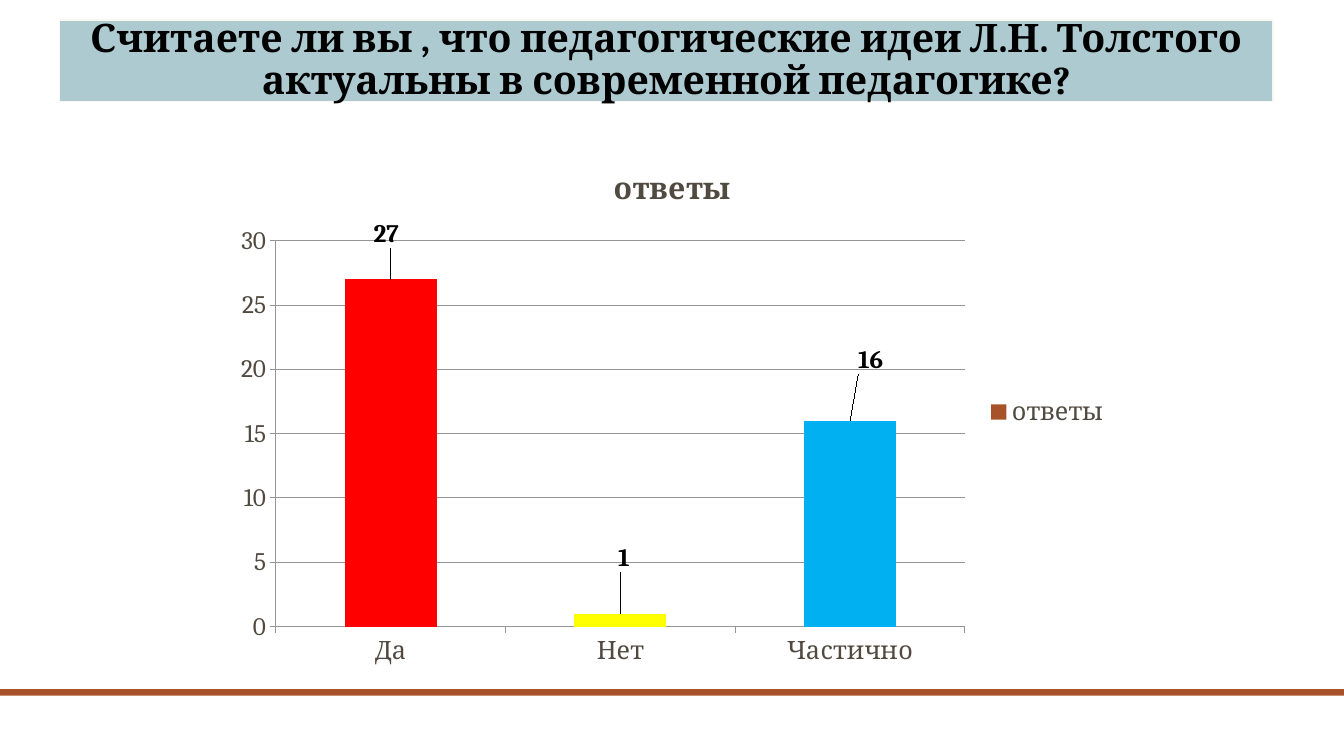
"""Build a survey slide with a banner title and a column chart of the answers."""
from dataclasses import dataclass

import lxml.etree
import pptx
import pptx.chart.data
import pptx.dml.color
import pptx.enum.chart
import pptx.enum.shapes
import pptx.enum.text
import pptx.oxml
import pptx.oxml.ns
import pptx.util

Pt = pptx.util.Pt


@dataclass(frozen=True)
class Theme:
    """Colours, font and type sizes of the slide."""
    font: str = "Cambria"
    black: str = "000000"
    text: str = "514A40"
    accent: str = "A85229"
    banner: str = "ADCAD1"
    banner_line: str = "F9F7F3"
    grid: str = "959595"
    title_size: float = 28
    chart_title_size: float = 21.6
    chart_size: float = 18


THEME = Theme()
QUESTION = "Считаете ли вы , что педагогические идеи Л.Н. Толстого актуальны в современной педагогике?"
SERIES_NAME = "ответы"
ANSWERS = [
    ("Да", 27, "FF0000", (-0.005, -0.05)),
    ("Нет", 1, "FFFF00", (0.004, -0.07)),
    ("Частично", 16, "00B0F0", (0.023, -0.08)),
]
PLOT_AREA = {"x": 0.058, "y": 0.177, "w": 0.769, "h": 0.728}


def color(value):
    """Turn a hex string into a colour."""
    return pptx.dml.color.RGBColor.from_string(value)


def format_font(font, size, fill, bold=False):
    """Apply the slide font with a size, colour and weight."""
    font.name = THEME.font
    font.size = Pt(size)
    font.bold = bold
    font.color.rgb = color(fill)


def write_text(text_frame, text, *, size, fill, bold=False, align=None, spacing=None):
    """Write one formatted paragraph into a text frame."""
    paragraph = text_frame.paragraphs[0]
    paragraph.alignment = align
    paragraph.line_spacing = spacing
    run = paragraph.add_run()
    run.text = text
    format_font(run.font, size, fill, bold)


def paint(fill, value):
    """Give a fill one solid colour."""
    fill.solid()
    fill.fore_color.rgb = color(value)


def add_banner_title(slide):
    """Format the title placeholder as a coloured banner."""
    title = slide.shapes.title
    title.left, title.top, title.width, title.height = Pt(42.5), Pt(14.4), Pt(866.9), Pt(58.3)
    paint(title.fill, THEME.banner)
    title.line.color.rgb = color(THEME.banner_line)
    title.line.width = Pt(1)
    text_frame = title.text_frame
    text_frame.auto_size = pptx.enum.text.MSO_AUTO_SIZE.NONE
    text_frame.word_wrap = True
    text_frame.vertical_anchor = pptx.enum.text.MSO_ANCHOR.MIDDLE
    write_text(text_frame, QUESTION, size=THEME.title_size, fill=THEME.black, bold=True,
               align=pptx.enum.text.PP_ALIGN.CENTER, spacing=0.9)


def add_footer_rule(slide, width):
    """Draw the full-width rule near the bottom."""
    rule = slide.shapes.add_shape(
        pptx.enum.shapes.MSO_SHAPE.RECTANGLE, 0, Pt(492.3), width, Pt(4.6))
    rule.shadow.inherit = False
    paint(rule.fill, THEME.accent)
    rule.line.fill.background()


def manual_layout(**values):
    """Build a chart layout element from its fractions."""
    layout = pptx.oxml.parse_xml(f"<c:layout {pptx.oxml.ns.nsdecls('c')}><c:manualLayout/></c:layout>")
    for name, value in values.items():
        child = lxml.etree.SubElement(layout[0], pptx.oxml.ns.qn(f"c:{name}"))
        child.set("val", str(value))
    return layout


def place_plot_area(chart):
    """Fix the inner plot area inside the chart frame."""
    plot_area = chart.plots[0]._element.getparent()
    for layout in plot_area.findall(pptx.oxml.ns.qn("c:layout")):
        plot_area.remove(layout)
    plot_area.insert(0, manual_layout(
        layoutTarget="inner", xMode="edge", yMode="edge", **PLOT_AREA))


def format_axis(axis):
    """Style an axis line, its ticks and its labels."""
    axis.major_tick_mark = pptx.enum.chart.XL_TICK_MARK.OUTSIDE
    axis.minor_tick_mark = pptx.enum.chart.XL_TICK_MARK.NONE
    axis.format.line.color.rgb = color(THEME.grid)
    axis.format.line.width = Pt(0.75)
    format_font(axis.tick_labels.font, THEME.chart_size, THEME.text)


def format_point(point, fill, offset):
    """Colour one column and shift its value label."""
    paint(point.format.fill, fill)
    label = point.data_label
    format_font(label.font, THEME.chart_size, THEME.black, bold=True)
    label.position = pptx.enum.chart.XL_LABEL_POSITION.OUTSIDE_END
    element = label.font._element.getparent()
    while element.tag != pptx.oxml.ns.qn("c:dLbl"):
        element = element.getparent()
    element.insert(1, manual_layout(x=offset[0], y=offset[1]))


def add_answer_chart(slide):
    """Add the column chart of the answers."""
    data = pptx.chart.data.CategoryChartData()
    data.categories = [answer[0] for answer in ANSWERS]
    data.add_series(SERIES_NAME, [answer[1] for answer in ANSWERS])
    chart = slide.shapes.add_chart(
        pptx.enum.chart.XL_CHART_TYPE.COLUMN_CLUSTERED,
        Pt(160), Pt(105), Pt(640), Pt(378.6), data).chart
    format_font(chart.font, THEME.chart_size, THEME.text)
    write_text(chart.chart_title.text_frame, SERIES_NAME,
               size=THEME.chart_title_size, fill=THEME.text, bold=True)
    chart.has_legend = True
    chart.legend.position = pptx.enum.chart.XL_LEGEND_POSITION.RIGHT
    chart.legend.include_in_layout = False
    format_font(chart.legend.font, THEME.chart_size, THEME.text)

    format_axis(chart.category_axis)
    value_axis = chart.value_axis
    format_axis(value_axis)
    value_axis.minimum_scale, value_axis.maximum_scale, value_axis.major_unit = 0, 30, 5
    value_axis.major_gridlines.format.line.color.rgb = color(THEME.grid)
    value_axis.major_gridlines.format.line.width = Pt(0.75)

    plot = chart.plots[0]
    plot.vary_by_categories = False
    plot.gap_width = 150
    series = plot.series[0]
    paint(series.format.fill, THEME.accent)
    series.data_labels.show_value = True
    format_font(series.data_labels.font, THEME.chart_size, THEME.black, bold=True)
    for index, (_, _, fill, offset) in enumerate(ANSWERS):
        format_point(series.points[index], fill, offset)
    place_plot_area(chart)


def main():
    """Create the presentation and save it."""
    presentation = pptx.Presentation()
    presentation.slide_width, presentation.slide_height = Pt(960), Pt(540)
    slide = presentation.slides.add_slide(presentation.slide_layouts[5])
    add_footer_rule(slide, presentation.slide_width)
    add_banner_title(slide)
    add_answer_chart(slide)
    presentation.save("out.pptx")


if __name__ == "__main__":
    main()
